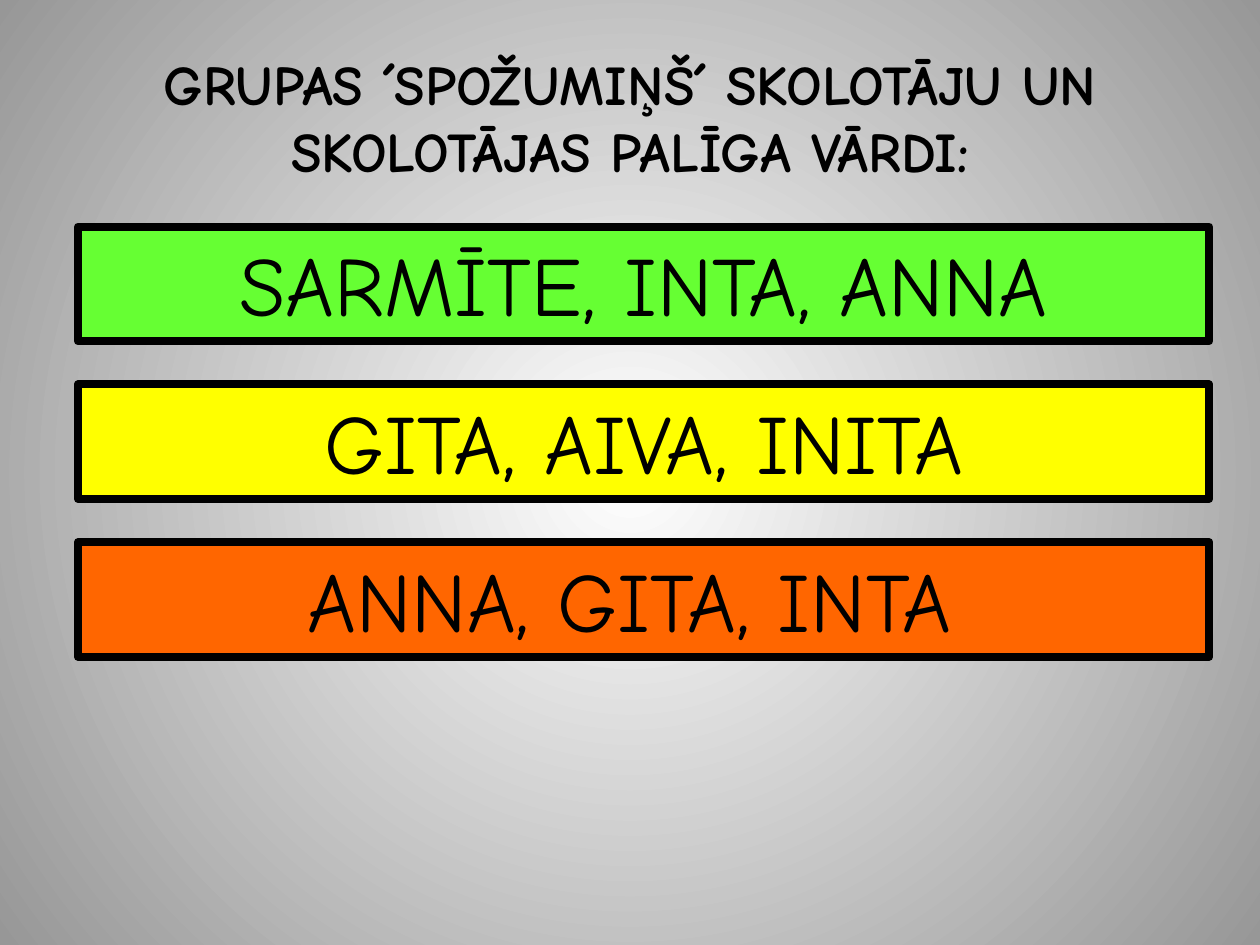
"""Build a slide that lists the teachers' names of a kindergarten group."""
import dataclasses

import lxml.etree
import pptx
import pptx.dml.color
import pptx.enum.shapes
import pptx.enum.text
import pptx.oxml.ns
import pptx.util

Cm = pptx.util.Cm


@dataclasses.dataclass(frozen=True)
class Theme:
    """Hold the colours, font and type sizes."""
    font: str = "Comic Neue"
    ink: str = "000000"
    glow: str = "FFFFFF"
    edge: str = "979797"
    green: str = "66FF33"
    yellow: str = "FFFF00"
    orange: str = "FF6600"
    title_size: int = 32
    name_size: int = 48
    border: float = 4.5


class SlideBuilder:
    """Place styled elements on one slide."""

    def __init__(self, slide, theme):
        """Keep the slide and its theme."""
        self.slide = slide
        self.theme = theme

    def colour(self, value):
        """Turn a hex value into a colour."""
        return pptx.dml.color.RGBColor.from_string(value)

    def add_text(self, frame, text, size, bold=False):
        """Put one centred run into a text frame."""
        paragraph = frame.paragraphs[0]
        paragraph.alignment = pptx.enum.text.PP_ALIGN.CENTER
        run = paragraph.add_run()
        run.text = text
        run.font.name = self.theme.font
        run.font.size = pptx.util.Pt(size)
        run.font.bold = bold
        run.font.color.rgb = self.colour(self.theme.ink)

    def background(self):
        """Fill the background with a glow from the centre."""
        fill = self.slide.background.fill
        fill.gradient()
        for stop, value in zip(fill.gradient_stops, (self.theme.glow, self.theme.edge)):
            stop.color.rgb = self.colour(value)
        qn = pptx.oxml.ns.qn
        linear = next(self.slide.element.iter(qn("a:lin")))
        circle = lxml.etree.Element(qn("a:path"), {"path": "circle"})
        lxml.etree.SubElement(
            circle, qn("a:fillToRect"), {side: "50000" for side in "ltrb"})
        linear.getparent().replace(linear, circle)

    def title(self, text, left, top, width, height):
        """Place and fill the title placeholder."""
        heading = self.slide.shapes.title
        heading.left, heading.top = Cm(left), Cm(top)
        heading.width, heading.height = Cm(width), Cm(height)
        frame = heading.text_frame
        frame.auto_size = pptx.enum.text.MSO_AUTO_SIZE.NONE
        frame.vertical_anchor = pptx.enum.text.MSO_ANCHOR.MIDDLE
        self.add_text(frame, text, self.theme.title_size, bold=True)

    def name_bar(self, names, fill, left, top, width, height):
        """Add a bordered bar with names."""
        bar = self.slide.shapes.add_shape(
            pptx.enum.shapes.MSO_SHAPE.RECTANGLE,
            Cm(left), Cm(top), Cm(width), Cm(height))
        bar.shadow.inherit = False
        bar.fill.solid()
        bar.fill.fore_color.rgb = self.colour(fill)
        bar.line.color.rgb = self.colour(self.theme.ink)
        bar.line.width = pptx.util.Pt(self.theme.border)
        frame = bar.text_frame
        frame.word_wrap = True
        frame.auto_size = pptx.enum.text.MSO_AUTO_SIZE.SHAPE_TO_FIT_TEXT
        frame.vertical_anchor = pptx.enum.text.MSO_ANCHOR.TOP
        self.add_text(frame, names, self.theme.name_size)


def main():
    """Build and save the slide."""
    deck = pptx.Presentation()
    deck.slide_width, deck.slide_height = Cm(25.4), Cm(19.05)
    theme = Theme()
    builder = SlideBuilder(deck.slides.add_slide(deck.slide_layouts[5]), theme)
    builder.background()
    builder.title("GRUPAS ´SPOŽUMIŅŠ´ SKOLOTĀJU UN SKOLOTĀJAS PALĪGA VĀRDI:",
                  1.27, 0.76, 22.86, 3.18)
    teams = (
        ("SARMĪTE, INTA, ANNA", theme.green),
        ("GITA, AIVA, INITA", theme.yellow),
        ("ANNA, GITA, INTA ", theme.orange),
    )
    first_top, step = 4.57, 3.18
    for row, (names, fill) in enumerate(teams):
        builder.name_bar(names, fill, 1.57, first_top + row * step, 22.81, 2.31)
    deck.save("out.pptx")


if __name__ == "__main__":
    main()
